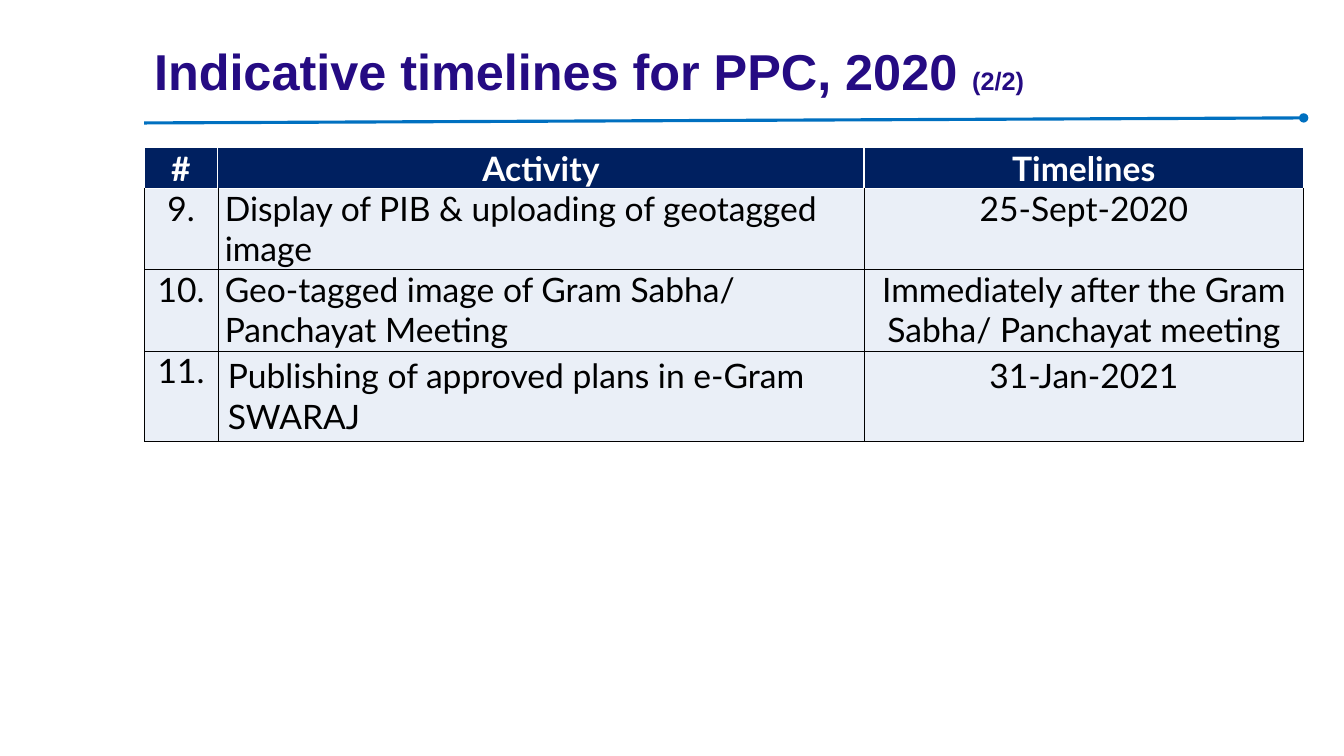
import pptx
import pptx.dml.color
import pptx.enum.shapes
import pptx.enum.text
import pptx.oxml
import pptx.oxml.ns
import pptx.util

SLIDE_SIZE = (13.33, 7.5)
LEFT, WIDTH = 1.43, 11.5
TITLE = [("Indicative timelines for PPC, 2020 ", 36), ("(2/2)", 18)]
HEADER = ("#", "Activity", "Timelines")
ACTIVITIES = [
    ("9.", "Display of PIB & uploading of geotagged image", "25-Sept-2020"),
    ("10.", "Geo-tagged image of Gram Sabha/ Panchayat Meeting",
     "Immediately after the Gram Sabha/ Panchayat meeting"),
    ("11.", "Publishing of approved plans in e-Gram SWARAJ", "31-Jan-2021"),
]
COLUMN_WIDTHS = (0.73, 6.41, 4.36)
ROW_HEIGHTS = (0.4, 0.8, 0.81, 0.9)
HEADER_MARGINS = (0.01, 0.01, 0.01, 0)
NUMBER_MARGINS = (0, 0, 0, 0)
TEXT_MARGINS = (0.07, 0, 0.07, 0)
LAST_MARGINS = (0.1, 0.05, 0.1, 0.05)
WHITE_EDGE, BLACK_EDGE = ("FFFFFF", 1), ("000000", 0.25)

inches, points = pptx.util.Inches, pptx.util.Pt
ALIGN = pptx.enum.text.PP_ALIGN
ANCHOR = pptx.enum.text.MSO_ANCHOR


def color(value):
    return pptx.dml.color.RGBColor.from_string(value)


def add_run(paragraph, text, size, font_name, font_color, bold):
    run = paragraph.add_run()
    run.text = text
    run.font.size = points(size)
    run.font.name = font_name
    run.font.bold = bold
    run.font.color.rgb = color(font_color)


def set_borders(cell, top, others):
    properties = cell._tc.get_or_add_tcPr()
    for position, side in enumerate("LRTB"):
        edge_color, width = top if side == "T" else others
        properties.insert(position, pptx.oxml.parse_xml(
            f'<a:ln{side} {pptx.oxml.ns.nsdecls("a")} w="{points(width)}">'
            f'<a:solidFill><a:srgbClr val="{edge_color}"/></a:solidFill></a:ln{side}>'))


def add_title(slide):
    box = slide.shapes.add_textbox(inches(LEFT), inches(0.01), inches(WIDTH), inches(1.45))
    frame = box.text_frame
    frame.word_wrap = True
    frame.vertical_anchor = ANCHOR.MIDDLE
    paragraph = frame.paragraphs[0]
    paragraph.line_spacing = 0.9
    for text, size in TITLE:
        add_run(paragraph, text, size, "Arial", "250B83", True)


def add_rule(slide):
    rule = slide.shapes.add_connector(
        pptx.enum.shapes.MSO_CONNECTOR.STRAIGHT,
        inches(LEFT), inches(1.22), inches(LEFT + WIDTH), inches(1.17))
    rule.line.color.rgb = color("0070C0")
    rule.line.width = points(2.25)
    namespace = pptx.oxml.ns.nsdecls("a")
    rule.line._get_or_add_ln().append(pptx.oxml.parse_xml(f'<a:tailEnd {namespace} type="oval"/>'))
    rule._element.spPr.append(pptx.oxml.parse_xml(f"<a:effectLst {namespace}/>"))


def cell_margins(row, column):
    if row == 0:
        return HEADER_MARGINS
    if column == 0:
        return NUMBER_MARGINS
    return LAST_MARGINS if row == len(ACTIVITIES) else TEXT_MARGINS


def fill_cell(cell, text, row, column):
    header = row == 0
    cell.fill.solid()
    cell.fill.fore_color.rgb = color("002060" if header else "EAEFF7")
    cell.vertical_anchor = ANCHOR.MIDDLE if header else ANCHOR.TOP
    margins = [inches(margin) for margin in cell_margins(row, column)]
    cell.margin_left, cell.margin_top, cell.margin_right, cell.margin_bottom = margins
    paragraph = cell.text_frame.paragraphs[0]
    paragraph.alignment = ALIGN.LEFT if column == 1 and not header else ALIGN.CENTER
    add_run(paragraph, text, 24, "Lato", "FFFFFF" if header else "000000", header)
    set_borders(cell, WHITE_EDGE if row <= 1 else BLACK_EDGE,
                WHITE_EDGE if header else BLACK_EDGE)


def add_timeline_table(slide):
    rows = [HEADER, *ACTIVITIES]
    table = slide.shapes.add_table(
        len(rows), len(HEADER), inches(LEFT), inches(1.46),
        inches(WIDTH), inches(sum(ROW_HEIGHTS))).table
    table.horz_banding = False
    for column, width in zip(table.columns, COLUMN_WIDTHS):
        column.width = inches(width)
    for row, height in zip(table.rows, ROW_HEIGHTS):
        row.height = inches(height)
    for row, texts in enumerate(rows):
        for column, text in enumerate(texts):
            fill_cell(table.cell(row, column), text, row, column)


def main():
    """Build the slide of indicative timelines."""
    presentation = pptx.Presentation()
    presentation.slide_width, presentation.slide_height = map(inches, SLIDE_SIZE)
    slide = presentation.slides.add_slide(presentation.slide_layouts[6])
    add_rule(slide)
    add_title(slide)
    add_timeline_table(slide)
    presentation.save("out.pptx")


if __name__ == "__main__":
    main()
